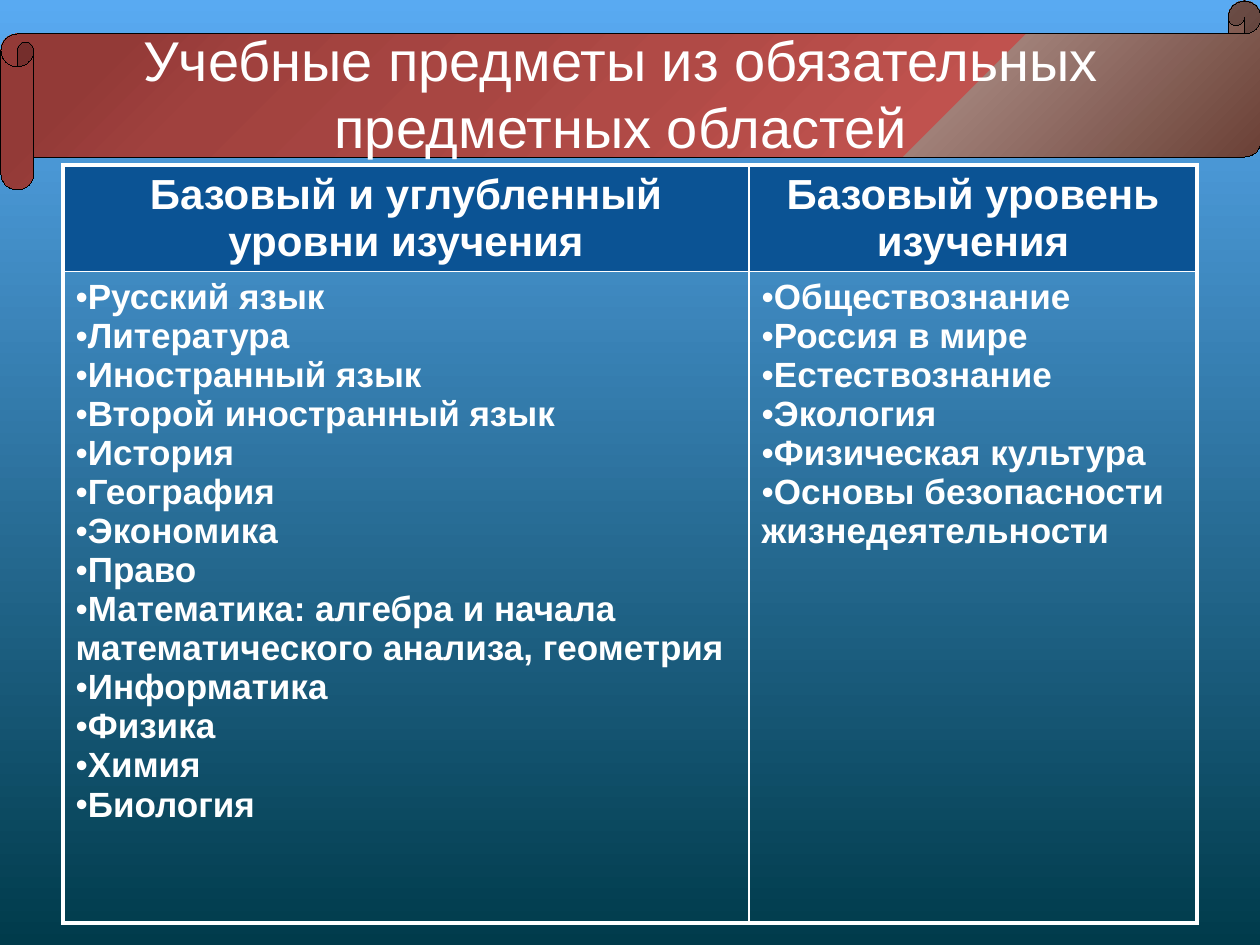
from dataclasses import dataclass

from lxml import etree
from pptx import Presentation
from pptx.dml.color import RGBColor
from pptx.enum import shapes, text
from pptx.oxml import ns
from pptx.util import Cm, Pt


@dataclass(frozen=True)
class Theme:
    font: str = "Arial"
    white: str = "FFFFFF"
    black: str = "000000"
    head: str = "0B5394"
    sky: str = "59AAF2"
    deep: str = "003B4B"
    title: int = 32
    label: int = 24
    body: int = 20
    thick: float = 2.25
    thin: float = 1
    scroll: tuple = (
        (11, "933A37"), (21, "A0413E"), (38, "A84642"), (50, "B04A46"),
        (73, "C0524E"), (73, "A08078"), (99, "683D33"), (100, "EBDAD4"),
        (100, "7B534A"), (100, "55261C"),
    )


THEME = Theme()
TITLE = "Учебные предметы из обязательных предметных областей"
COLUMNS = [
    ("Базовый и углубленный уровни изучения", 13.83, [
        "Русский язык", "Литература", "Иностранный язык",
        "Второй иностранный язык", "История", "География", "Экономика", "Право",
        "Математика: алгебра и начала математического анализа, геометрия",
        "Информатика", "Физика", "Химия", "Биология",
    ]),
    ("Базовый уровень изучения", 9.03, [
        "Обществознание", "Россия в мире", "Естествознание", "Экология",
        "Физическая культура", "Основы безопасности жизнедеятельности",
    ]),
]


def color(code):
    return RGBColor.from_string(code)


def node(parent, tag, **attrs):
    return etree.SubElement(parent, ns.qn(tag), **attrs)


def style(para, size, bold=False):
    font = para.font
    font.name, font.size, font.bold = THEME.font, Pt(size), bold
    font.color.rgb = color(THEME.white)


def add_back(slide):
    fill = slide.background.fill
    fill.gradient()
    fill.gradient_angle = 270
    for stop, place, code in zip(fill.gradient_stops, (0, 1), (THEME.sky, THEME.deep)):
        stop.position = place
        stop.color.rgb = color(code)


def add_scroll(slide):
    scroll = slide.shapes.add_shape(
        shapes.MSO_SHAPE.HORIZONTAL_SCROLL, Cm(0.02), Cm(0.02), Cm(25.4), Cm(3.81))
    scroll.adjustments[0] = 0.174
    scroll.shadow.inherit = False
    scroll.line.color.rgb = color(THEME.black)
    scroll.element.spPr.find(ns.qn("a:ln")).set("w", "0")
    scroll.fill.gradient()
    grad = scroll.element.spPr.find(ns.qn("a:gradFill"))
    for child in list(grad):
        grad.remove(child)
    stops = node(grad, "a:gsLst")
    for place, code in THEME.scroll:
        stop = node(stops, "a:gs", pos=str(place * 1000))
        node(stop, "a:srgbClr", val=code)
    route = node(grad, "a:path", path="circle")
    node(route, "a:fillToRect", r="100000", b="100000")
    slide.shapes.title.element.addprevious(scroll.element)


def set_title(slide):
    title = slide.shapes.title
    title.left, title.top, title.width, title.height = Cm(1.09), Cm(0), Cm(22.86), Cm(3.73)
    frame = title.text_frame
    frame.text = TITLE
    frame.word_wrap = True
    frame.auto_size = text.MSO_AUTO_SIZE.NONE
    frame.vertical_anchor = text.MSO_ANCHOR.MIDDLE
    para = frame.paragraphs[0]
    para.alignment = text.PP_ALIGN.CENTER
    style(para, THEME.title)


def add_edges(cell, row, col):
    props = cell._tc.get_or_add_tcPr()
    outer = {"L": col == 0, "R": col == 1, "T": row == 0, "B": row == 1}
    for side, edge in outer.items():
        width = Pt(THEME.thick if edge else THEME.thin)
        line = node(props, f"a:ln{side}", w=str(width))
        node(node(line, "a:solidFill"), "a:srgbClr", val=THEME.white)


def fill_head(cell, label):
    cell.text = label
    cell.fill.solid()
    cell.fill.fore_color.rgb = color(THEME.head)
    para = cell.text_frame.paragraphs[0]
    para.alignment = text.PP_ALIGN.CENTER
    style(para, THEME.label, True)


def fill_list(cell, items):
    cell.text = "\n".join(items)
    cell.fill.background()
    for para in cell.text_frame.paragraphs:
        style(para, THEME.body, True)
        props = para._p.get_or_add_pPr()
        props.set("marL", "0")
        props.set("indent", "0")
        face = etree.Element(ns.qn("a:buFont"), typeface=THEME.font)
        mark = etree.Element(ns.qn("a:buChar"), char="•")
        props.insert(0, face)
        props.insert(1, mark)


def add_grid(slide):
    table = slide.shapes.add_table(
        2, len(COLUMNS), Cm(1.27), Cm(3.33), Cm(22.86), Cm(15.26)).table
    for row, height in zip(table.rows, (2.13, 13.13)):
        row.height = Cm(height)
    for col, (label, width, items) in enumerate(COLUMNS):
        table.columns[col].width = Cm(width)
        for row in range(2):
            add_edges(table.cell(row, col), row, col)
        fill_head(table.cell(0, col), label)
        fill_list(table.cell(1, col), items)


def main():
    deck = Presentation()
    deck.slide_width, deck.slide_height = Cm(25.4), Cm(19.05)
    slide = deck.slides.add_slide(deck.slide_layouts[5])
    add_back(slide)
    add_scroll(slide)
    set_title(slide)
    add_grid(slide)
    deck.save("out.pptx")


if __name__ == "__main__":
    main()
